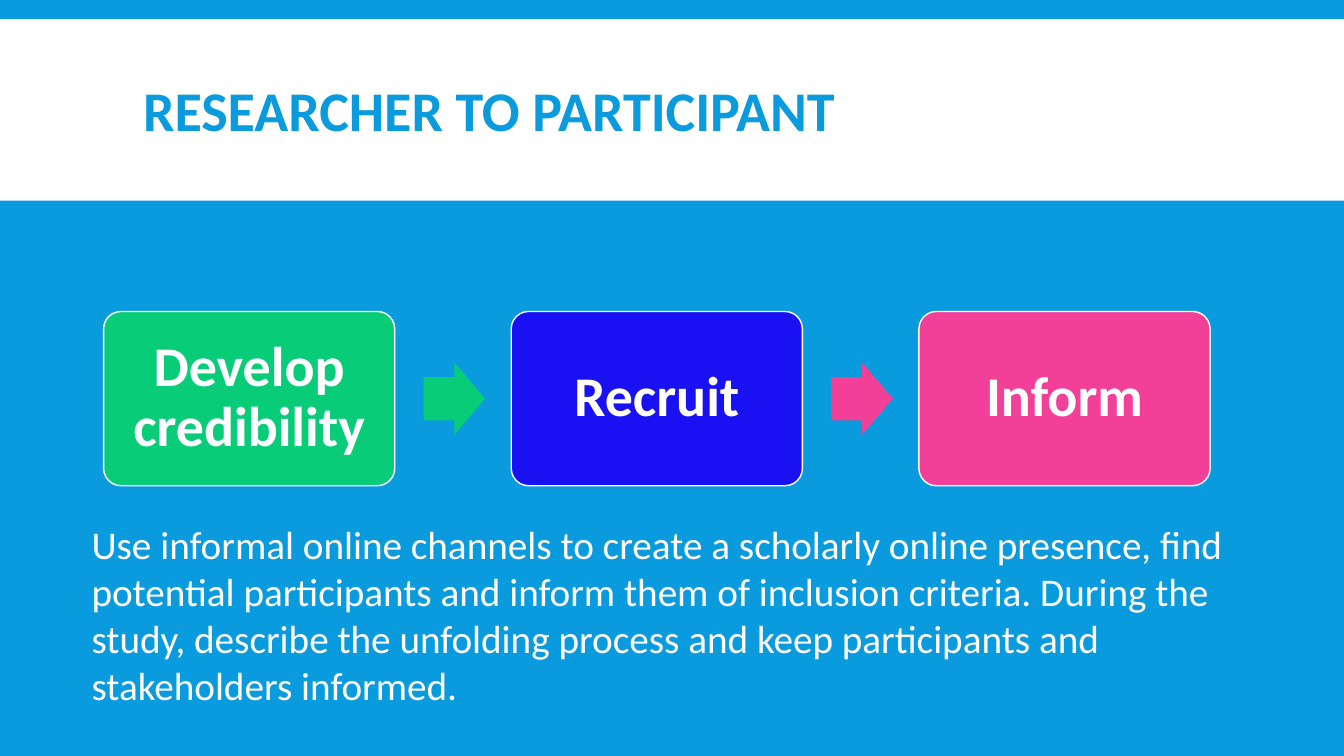
from pptx import Presentation
from pptx.dml.color import RGBColor
from pptx.enum.shapes import MSO_SHAPE as Preset
from pptx.enum.text import MSO_ANCHOR as Anchor, PP_ALIGN as Align
from pptx.util import Pt

COLOURS = {
    "sky": "099BDD",
    "white": "FFFFFF",
    "green": "08CC78",
    "blue": "1911F2",
    "pink": "F24099",
}
STEPS = [("Develop\vcredibility", "green"), ("Recruit", "blue"), ("Inform", "pink")]
ARROW_COLOURS = ["green", "pink"]
STEP_LEFT, STEP_PITCH = 74, 291.2


def write(shape, text, size=40, colour="white", bold=True, align=Align.LEFT,
          anchor=Anchor.MIDDLE, spacing=1.0, inset=7.2):
    frame = shape.text_frame
    frame.word_wrap = True
    frame.vertical_anchor = anchor
    frame.margin_left = frame.margin_right = Pt(inset)
    frame.margin_top = frame.margin_bottom = Pt(inset / 2)
    para = frame.paragraphs[0]
    para.text = text
    para.alignment = align
    para.line_spacing = spacing
    for span in para.runs:
        span.font.name = "Calibri"
        span.font.size = Pt(size)
        span.font.bold = bold
        span.font.color.rgb = RGBColor.from_string(COLOURS[colour])


def add_filled(preset, left, top, width, height, colour, outlined=False):
    shape = page.shapes.add_shape(preset, Pt(left), Pt(top), Pt(width), Pt(height))
    shape.shadow.inherit = False
    shape.fill.solid()
    shape.fill.fore_color.rgb = RGBColor.from_string(COLOURS[colour])
    if outlined:
        shape.line.color.rgb = RGBColor.from_string(COLOURS["white"])
        shape.line.width = Pt(1)
    else:
        shape.line.fill.background()
    return shape


deck = Presentation()
deck.slide_width, deck.slide_height = Pt(960), Pt(540)
page = deck.slides.add_slide(deck.slide_layouts[5])
page.background.fill.solid()
page.background.fill.fore_color.rgb = RGBColor.from_string(COLOURS["sky"])

# Title on its white band
title = page.shapes.title
title.left, title.top, title.width, title.height = Pt(95), Pt(22.3), Pt(770.4), Pt(118.8)
write(title, "RESEARCHER TO PARTICIPANT", colour="sky", spacing=0.85)
band = add_filled(Preset.RECTANGLE, 0, 13.7, 960, 129.6, "white")
title.element.addprevious(band.element)

# Three steps
for index, (label, colour) in enumerate(STEPS):
    box = add_filled(Preset.ROUNDED_RECTANGLE, STEP_LEFT + index * STEP_PITCH, 222.5,
                     208, 124.5, colour, outlined=True)
    box.adjustments[0] = 0.1
    write(box, label, align=Align.CENTER, spacing=0.9, inset=12)

# Arrows between the steps
for index, colour in enumerate(ARROW_COLOURS):
    arrow = add_filled(Preset.RIGHT_ARROW, 302.6 + index * STEP_PITCH, 259, 44, 51.6, colour)
    arrow.adjustments[0] = 0.6
    arrow.adjustments[1] = 0.5

# Explanation
explanation = page.shapes.add_textbox(Pt(58.3), Pt(368), Pt(858.2), Pt(143.3))
write(explanation,
      "Use informal online channels to create a scholarly online presence, find "
      "potential participants and inform them of inclusion criteria. During the "
      "study, describe the unfolding process and keep participants and "
      "stakeholders informed.",
      size=28, bold=False, anchor=Anchor.TOP)

deck.save("out.pptx")
